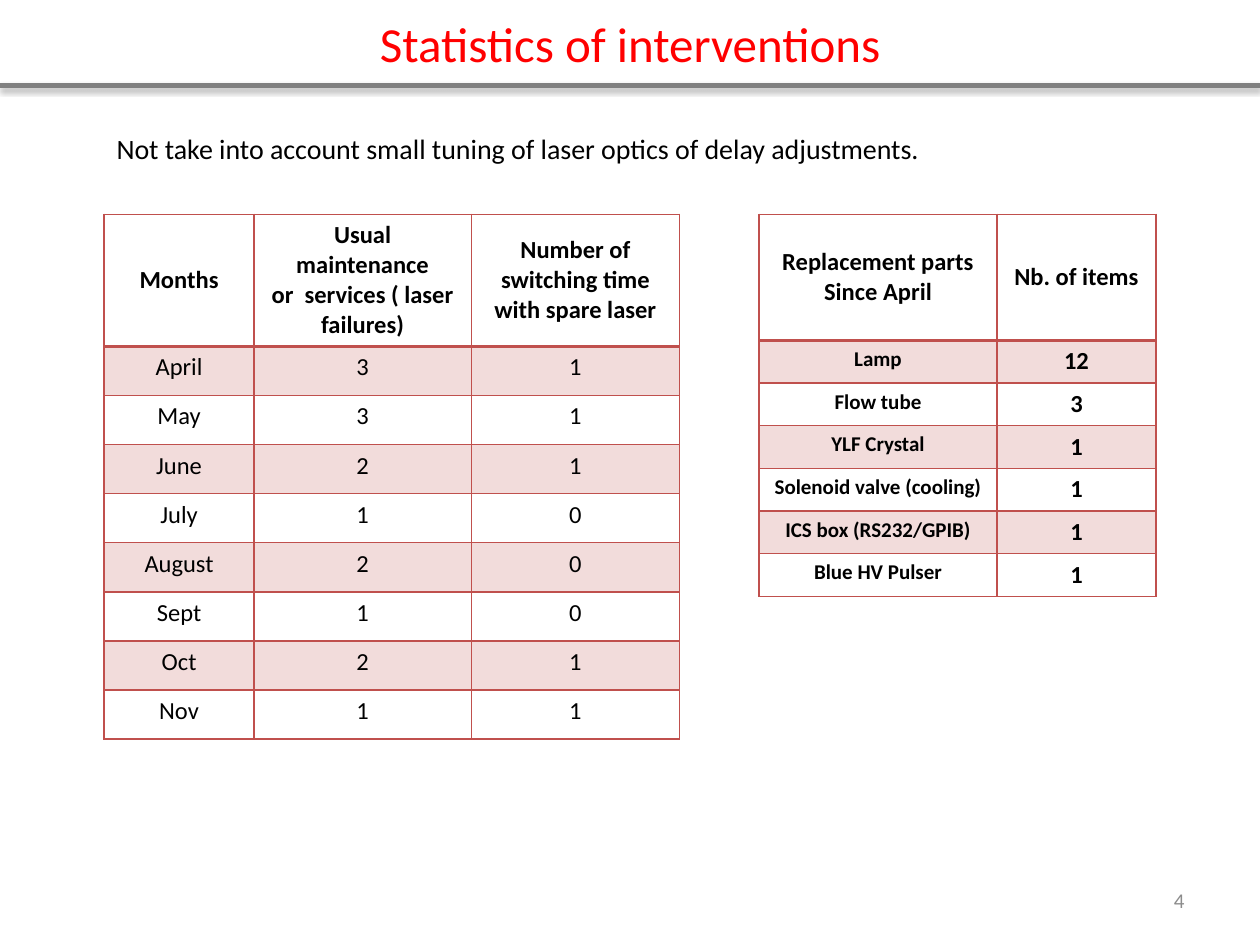
from lxml import etree
from pptx import Presentation
from pptx import util as u
from pptx.dml.color import RGBColor
from pptx.enum import shapes, text
from pptx.oxml import parse_xml
from pptx.oxml.ns import nsdecls, qn

COLORS = {"title": "FF0000", "text": "000000", "rule": "808080",
          "border": "C0504D", "band": "F2DCDB", "number": "8C8C8C"}
FONT = "Calibri"
CENTER = text.PP_ALIGN.CENTER
MIDDLE = text.MSO_ANCHOR.MIDDLE

MONTHS = [
    ("Months", "Usual maintenance\nor  services ( laser failures)",
     "Number of switching time\nwith spare laser"),
    ("April", "3", "1"), ("May", "3", "1"), ("June", "2", "1"),
    ("July", "1", "0"), ("August", "2", "0"), ("Sept", "1", "0"),
    ("Oct", "2", "1"), ("Nov", "1", "1"),
]
PARTS = [
    ("Replacement parts\nSince April", "Nb. of items"),
    ("Lamp", "12"), ("Flow tube", "3"), ("YLF Crystal", "1"),
    ("Solenoid valve (cooling)", "1"), ("ICS box (RS232/GPIB)", "1"),
    ("Blue HV Pulser", "1"),
]


def rgb(name):
    return RGBColor.from_string(COLORS[name])


def write(frame, words, size, color="text", bold=False, align=None):
    for index, line in enumerate(words.split("\n")):
        para = frame.add_paragraph() if index else frame.paragraphs[0]
        para.alignment = align
        span = para.add_run()
        span.text = line
        span.font.name = FONT
        span.font.size = u.Pt(size)
        span.font.bold = bold
        span.font.color.rgb = rgb(color)


def add_title(page, box, words):
    left, top, width, height = box
    title = page.shapes.title
    title.left, title.top = u.Cm(left), u.Cm(top)
    title.width, title.height = u.Cm(width), u.Cm(height)
    title.text_frame.vertical_anchor = MIDDLE
    write(title.text_frame, words, 28, "title", align=CENTER)

    bottom = u.Cm(top + height)
    rule = page.shapes.add_connector(
        shapes.MSO_CONNECTOR.STRAIGHT, u.Cm(left), bottom, u.Cm(left + width), bottom)
    rule.line.color.rgb = rgb("rule")
    rule.line.width = u.Pt(3)
    effects = etree.SubElement(rule._element.spPr, qn("a:effectLst"))
    shadow = etree.SubElement(effects, qn("a:outerShdw"), blurRad=str(u.Pt(3.1)),
                              dist=str(u.Pt(1.8)), dir="5400000", rotWithShape="0")
    shade = etree.SubElement(shadow, qn("a:srgbClr"), val=COLORS["text"])
    etree.SubElement(shade, qn("a:alpha"), val="35000")


def add_text(page, box, words, size, color="text", align=None):
    frame = page.shapes.add_textbox(*map(u.Cm, box)).text_frame
    frame.word_wrap = True
    frame.vertical_anchor = MIDDLE
    write(frame, words, size, color, align=align)


def set_borders(cell, top, bottom):
    widths = {"lnL": 1, "lnR": 1, "lnT": top, "lnB": bottom}
    for side, points in widths.items():
        cell._tc.get_or_add_tcPr().append(parse_xml(
            f'<a:{side} {nsdecls("a")} w="{u.Pt(points)}"><a:solidFill>'
            f'<a:srgbClr val="{COLORS["border"]}"/></a:solidFill></a:{side}>'))


def add_statistics(page, box, rows, widths, header_height, label_size=14, bold=False):
    left, top, width, height = box
    table = page.shapes.add_table(len(rows), len(widths), *map(u.Cm, box)).table
    table.first_row = table.horz_banding = False
    for column, size in zip(table.columns, widths):
        column.width = u.Cm(size)
    row_height = (height - header_height) / (len(rows) - 1)
    for r, values in enumerate(rows):
        header = r == 0
        table.rows[r].height = u.Cm(header_height if header else row_height)
        for c, value in enumerate(values):
            cell = table.cell(r, c)
            set_borders(cell, 2 if r == 1 else 1, 2 if header else 1)
            if r % 2:
                cell.fill.solid()
                cell.fill.fore_color.rgb = rgb("band")
            else:
                cell.fill.background()
            cell.vertical_anchor = MIDDLE if header else text.MSO_ANCHOR.TOP
            size = label_size if c == 0 and not header else 14
            write(cell.text_frame, value, size, bold=header or bold, align=CENTER)


def main():
    deck = Presentation()
    deck.slide_width, deck.slide_height = u.Cm(25.4), u.Cm(19.05)
    page = deck.slides.add_slide(deck.slide_layouts[5])
    add_text(page, (18.2, 17.65, 5.93, 1.01), "4", 12, "number", text.PP_ALIGN.RIGHT)
    add_statistics(page, (2.1, 4.32, 11.6, 10.58), MONTHS, (3.02, 4.38, 4.2), 2.66)
    add_statistics(page, (15.3, 4.32, 8, 7.7), PARTS, (4.8, 3.2), 2.54,
                   label_size=12, bold=True)
    add_title(page, (0, 0, 25.4, 1.73), "Statistics of interventions")
    add_text(page, (2.1, 2.53, 18.4, 0.94),
             "Not take into account small tuning of laser optics of delay adjustments.", 16)
    deck.save("out.pptx")


if __name__ == "__main__":
    main()
